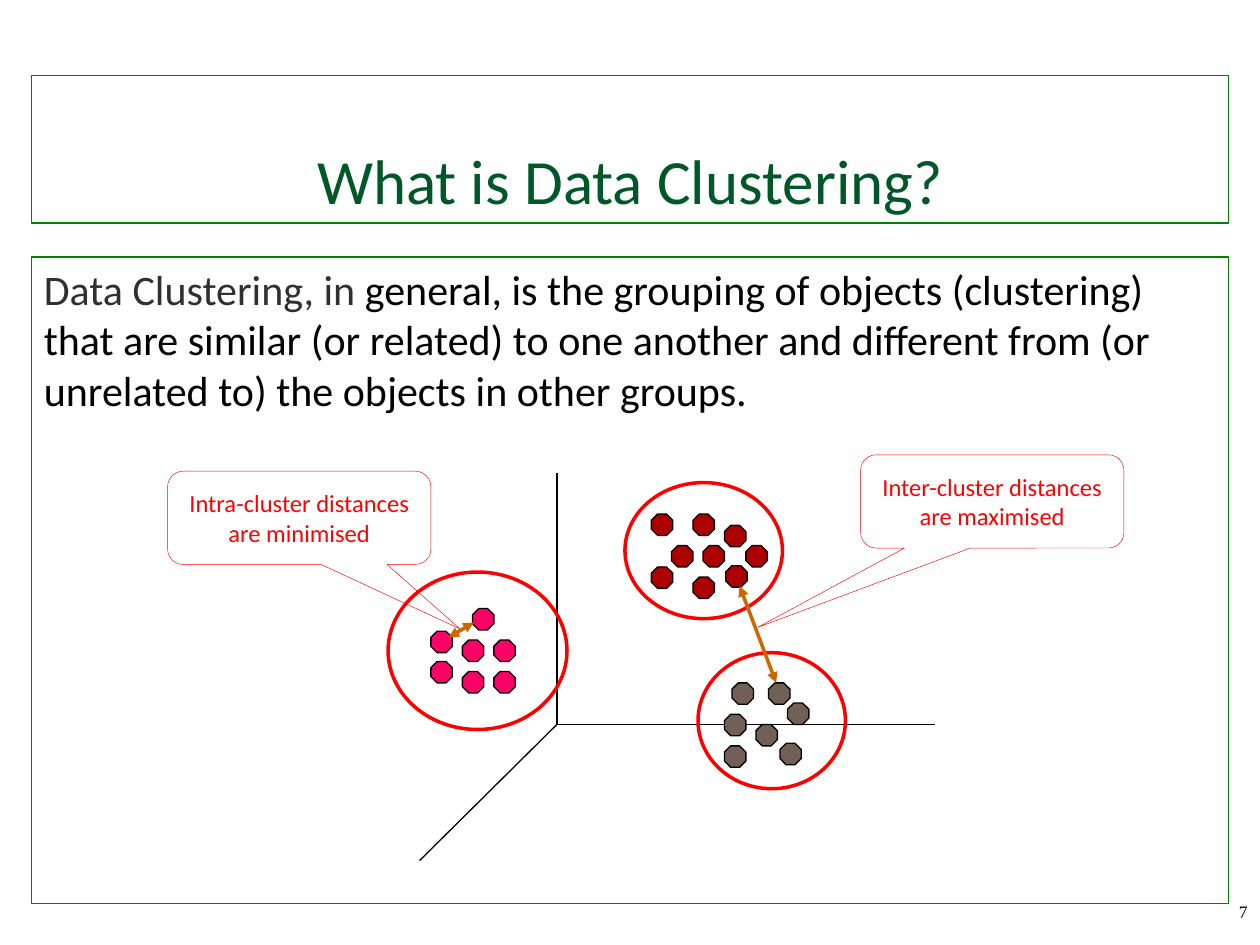
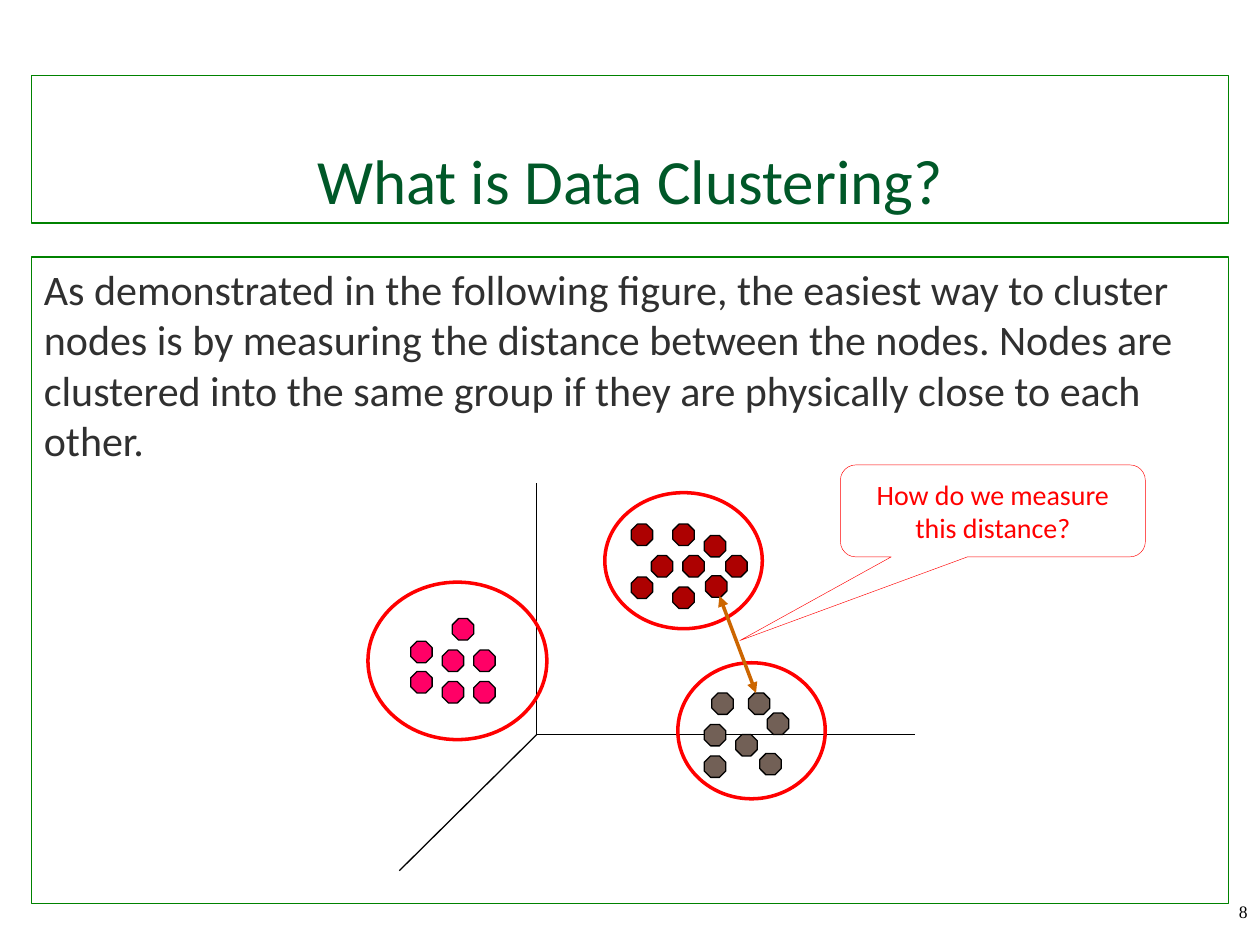
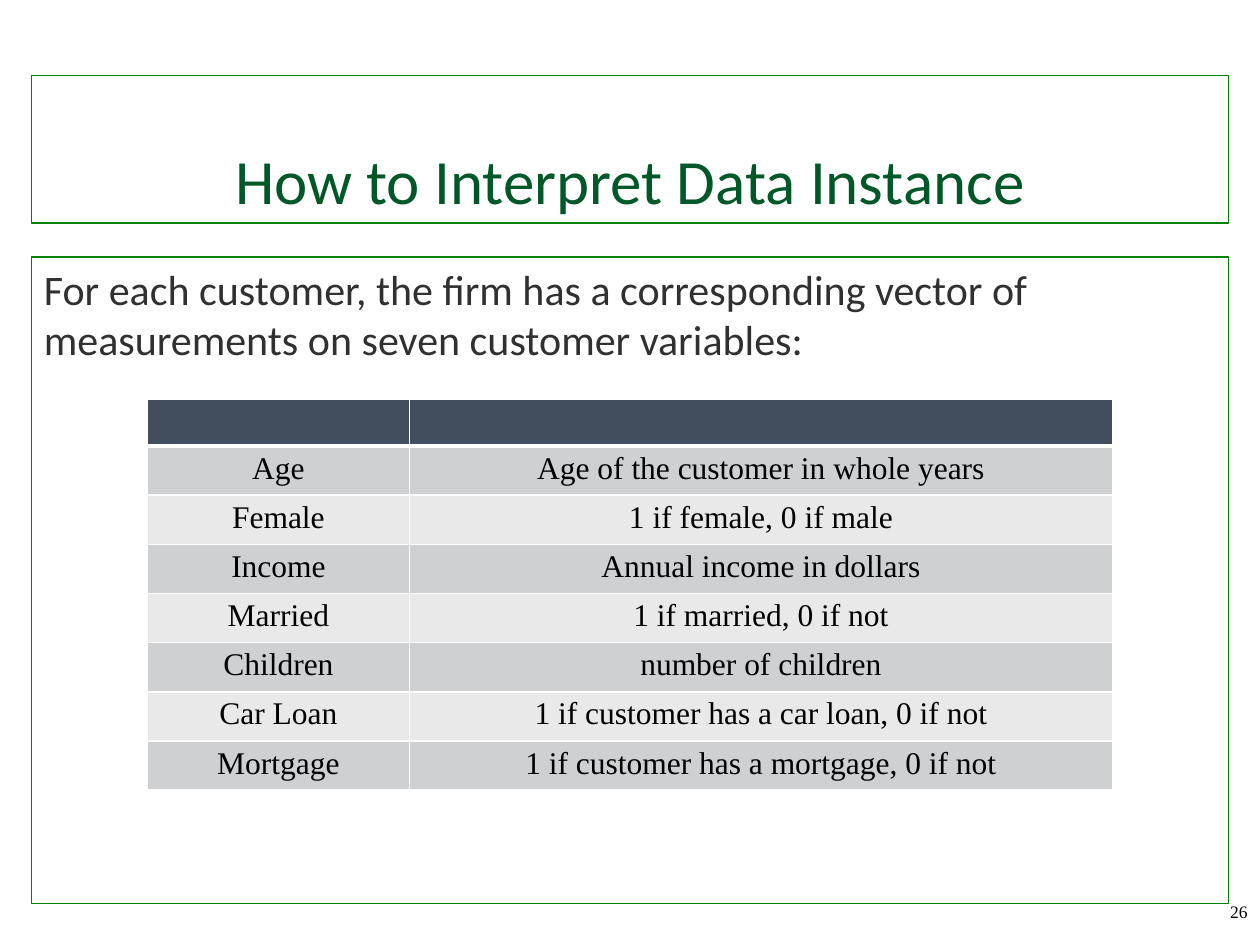
from dataclasses import dataclass

from lxml.etree import SubElement
from pptx import Presentation
from pptx.dml.color import RGBColor
from pptx.enum.shapes import MSO_CONNECTOR, MSO_SHAPE as Preset
from pptx.enum.text import MSO_ANCHOR as Anchor, PP_ALIGN as Align
from pptx.oxml.ns import qn
from pptx.util import Emu, Pt

PX = 9144  # EMU in one px, at 100 px to the inch


@dataclass(frozen=True)
class Theme:
    sans: str = "Calibri"
    serif: str = "Times New Roman"
    frame: str = "008200"
    title: str = "005828"
    body: str = "303030"
    ink: str = "000000"
    paper: str = "FFFFFF"
    accent: str = "FF0000"
    arrow: str = "CC6600"
    red_dot: str = "AD0101"
    pink_dot: str = "FF0066"
    brown_dot: str = "726056"
    header: str = "424E5B"
    odd_row: str = "CFD0D2"
    even_row: str = "E9E9EA"
    title_size: int = 36
    body_size: int = 24
    table_size: int = 18
    number_size: int = 10
    thin: float = 0.75
    hairline: float = 0.25
    bold_line: float = 2


THEME = Theme()


@dataclass(frozen=True)
class Box:
    left: int
    top: int
    width: int
    height: int

    def inside(self, left, top, width, height):
        """Return a box whose place is given from this box's corner."""
        return Box(self.left + left, self.top + top, width, height)

    def emu(self):
        return [Emu(n * PX) for n in (self.left, self.top, self.width, self.height)]


PAGE = Box(0, 0, 1000, 750)
TITLE = Box(25, 60, 950, 117)
BODY = Box(25, 204, 950, 513)
NUMBER = Box(917, 710, 83, 40)
TABLE = Box(117, 317, 766, 303)

DOT = 17
CLUSTERS = [  # dot colour, ring, dot corners
    (THEME.red_dot, (163, 8, 125, 108),
     [(200, 58), (225, 58), (217, 33), (217, 83), (259, 58),
      (242, 42), (184, 33), (243, 74), (184, 75)]),
    (THEME.pink_dot, (-25, 79, 142, 125),
     [(9, 126), (34, 133), (34, 158), (59, 133), (42, 108), (59, 158), (9, 150)]),
    (THEME.brown_dot, (221, 143, 117, 108),
     [(248, 167), (292, 183), (267, 200), (242, 217), (286, 215),
      (242, 192), (277, 167)]),
]
ORIGIN = (109, 200)
AXIS_ENDS = [(109, 0), (409, 200), (0, 308)]
INTER_ARROW = ((283, 167), (254, 90))
INTRA_ARROW = ((23, 131), (43, 119))

VARIABLES = [
    ("Age", "Age of the customer in whole years"),
    ("Female", "1 if female, 0 if male"),
    ("Income", "Annual income in dollars"),
    ("Married", "1 if married, 0 if not"),
    ("Children", "number of children"),
    ("Car Loan", "1 if customer has a car loan, 0 if not"),
    ("Mortgage", "1 if customer has a mortgage, 0 if not"),
]


def rgb(code):
    return RGBColor.from_string(code)


def add_span(para, text, size, color, font=THEME.sans):
    span = para.add_run()
    span.text = text
    span.font.size = Pt(size)
    span.font.name = font
    span.font.color.rgb = rgb(color)


def add_preset(page, preset, box, line, width, fill=None):
    shape = page.shapes.add_shape(preset, *box.emu())
    shape.shadow.inherit = False
    shape.line.color.rgb = rgb(line)
    shape.line.width = Pt(width)
    if fill:
        shape.fill.solid()
        shape.fill.fore_color.rgb = rgb(fill)
    else:
        shape.fill.background()
    return shape


def first_para(shape, anchor, align):
    frame = shape.text_frame
    frame.word_wrap = True
    frame.vertical_anchor = anchor
    para = frame.paragraphs[0]
    para.alignment = align
    return para


def add_line(page, area, start, end, color, width, arrows=False):
    """Draw a line between two points given from the corner of area."""
    points = [Emu(n * PX) for x, y in (start, end)
              for n in (area.left + x, area.top + y)]
    line = page.shapes.add_connector(MSO_CONNECTOR.STRAIGHT, *points)
    line.line.color.rgb = rgb(color)
    line.line.width = Pt(width)
    if arrows:
        outline = line.line._get_or_add_ln()
        for end_tag in ("a:headEnd", "a:tailEnd"):
            SubElement(outline, qn(end_tag), type="triangle")
    SubElement(line._element.spPr, qn("a:effectLst"))


def add_callout(page, box, text, size, tip):
    callout = add_preset(page, Preset.ROUNDED_RECTANGULAR_CALLOUT, box,
                         THEME.accent, THEME.hairline)
    callout.adjustments[0], callout.adjustments[1] = tip
    add_span(first_para(callout, Anchor.MIDDLE, Align.CENTER), text, size, THEME.accent)


def add_clusters(page, area):
    """Draw the axes, the three ringed clusters and the arrow between two of them."""
    for end in AXIS_ENDS:
        add_line(page, area, ORIGIN, end, THEME.ink, THEME.thin)
    for color, _, corners in CLUSTERS:
        for left, top in corners:
            add_preset(page, Preset.OCTAGON, area.inside(left, top, DOT, DOT),
                       THEME.ink, THEME.thin, color)
    for _, ring, _ in CLUSTERS:
        add_preset(page, Preset.OVAL, area.inside(*ring), THEME.accent, THEME.bold_line)
    add_line(page, area, *INTER_ARROW, THEME.arrow, THEME.bold_line, arrows=True)


def style_cell(cell, fill, bottom=1):
    """Set white borders, then the fill, which must follow them in the XML."""
    properties = cell._tc.get_or_add_tcPr()
    for side, width in (("L", 1), ("R", 1), ("T", 1), ("B", bottom)):
        border = SubElement(properties, qn(f"a:ln{side}"), w=str(Pt(width)))
        solid = SubElement(border, qn("a:solidFill"))
        SubElement(solid, qn("a:srgbClr"), val=THEME.paper)
    cell.fill.solid()
    cell.fill.fore_color.rgb = rgb(fill)
    cell.margin_top, cell.margin_bottom = Emu(4 * PX), Emu(5 * PX)


def add_variable_table(page, box):
    table = page.shapes.add_table(len(VARIABLES) + 1, 2, *box.emu()).table
    name_width = 208
    for column, width in zip(table.columns, (name_width, box.width - name_width)):
        column.width = Emu(width * PX)
    for row in table.rows:
        row.height = Emu(37 * PX)
    for cell in table.rows[0].cells:
        style_cell(cell, THEME.header, bottom=3)
        SubElement(cell.text_frame.paragraphs[0]._p, qn("a:endParaRPr"), sz="1400")
    for index, texts in enumerate(VARIABLES, start=1):
        fill = THEME.odd_row if index % 2 else THEME.even_row
        for cell, text in zip(table.rows[index].cells, texts):
            style_cell(cell, fill)
            para = cell.text_frame.paragraphs[0]
            para.alignment = Align.CENTER
            add_span(para, text, THEME.table_size, THEME.ink, THEME.serif)


def add_page(deck, title, body, number):
    """Add a slide with its framed title, framed body and number; body is (text, colour) pairs."""
    page = deck.slides.add_slide(deck.slide_layouts[6])
    heading = add_preset(page, Preset.RECTANGLE, TITLE, THEME.frame, THEME.thin)
    add_span(first_para(heading, Anchor.BOTTOM, Align.CENTER),
             title, THEME.title_size, THEME.title)
    content = add_preset(page, Preset.RECTANGLE, BODY, THEME.frame, THEME.thin)
    para = first_para(content, Anchor.TOP, Align.LEFT)
    para.space_after = Pt(6)
    for text, color in body:
        add_span(para, text, THEME.body_size, color)
    footer = page.shapes.add_textbox(*NUMBER.emu())
    add_span(first_para(footer, Anchor.TOP, Align.RIGHT),
             str(number), THEME.number_size, THEME.ink, THEME.serif)
    return page


def add_definition_page(deck):
    page = add_page(deck, "What is Data Clustering?", [
        ("Data Clustering, in ", THEME.body),
        ("general, is the grouping of objects (clustering) that are similar "
         "(or related) to one another and different from (or unrelated to) "
         "the objects in other groups.", THEME.ink),
    ], 7)
    area = Box(333, 375, 409, 308)
    add_clusters(page, area)
    add_callout(page, area.inside(350, -14, 209, 74),
                "Inter-cluster distances are maximised", 14, (-0.89, 1.35))
    add_callout(page, area.inside(-200, -1, 209, 74),
                "Intra-cluster distances are minimised", 14, (0.61, 1.19))
    add_line(page, area, *INTRA_ARROW, THEME.arrow, THEME.bold_line, arrows=True)


def add_distance_page(deck):
    page = add_page(deck, "What is Data Clustering?", [
        ("As demonstrated in the following figure, the easiest way to cluster "
         "nodes is by measuring the distance between the nodes. Nodes are "
         "clustered into the same group if they are physically close to each "
         "other.", THEME.body),
    ], 8)
    area = Box(317, 383, 409, 308)
    add_clusters(page, area)
    add_callout(page, area.inside(350, -14, 242, 73),
                "How do we measure this distance?", 16, (-0.83, 1.41))


def add_variables_page(deck):
    page = add_page(deck, "How to Interpret Data Instance", [
        ("For each customer, the firm has a corresponding vector of "
         "measurements on seven customer variables:", THEME.body),
    ], 26)
    add_variable_table(page, TABLE)


def main():
    deck = Presentation()
    deck.slide_width, deck.slide_height = PAGE.emu()[2:]
    add_definition_page(deck)
    add_distance_page(deck)
    add_variables_page(deck)
    deck.save("out.pptx")


if __name__ == "__main__":
    main()
